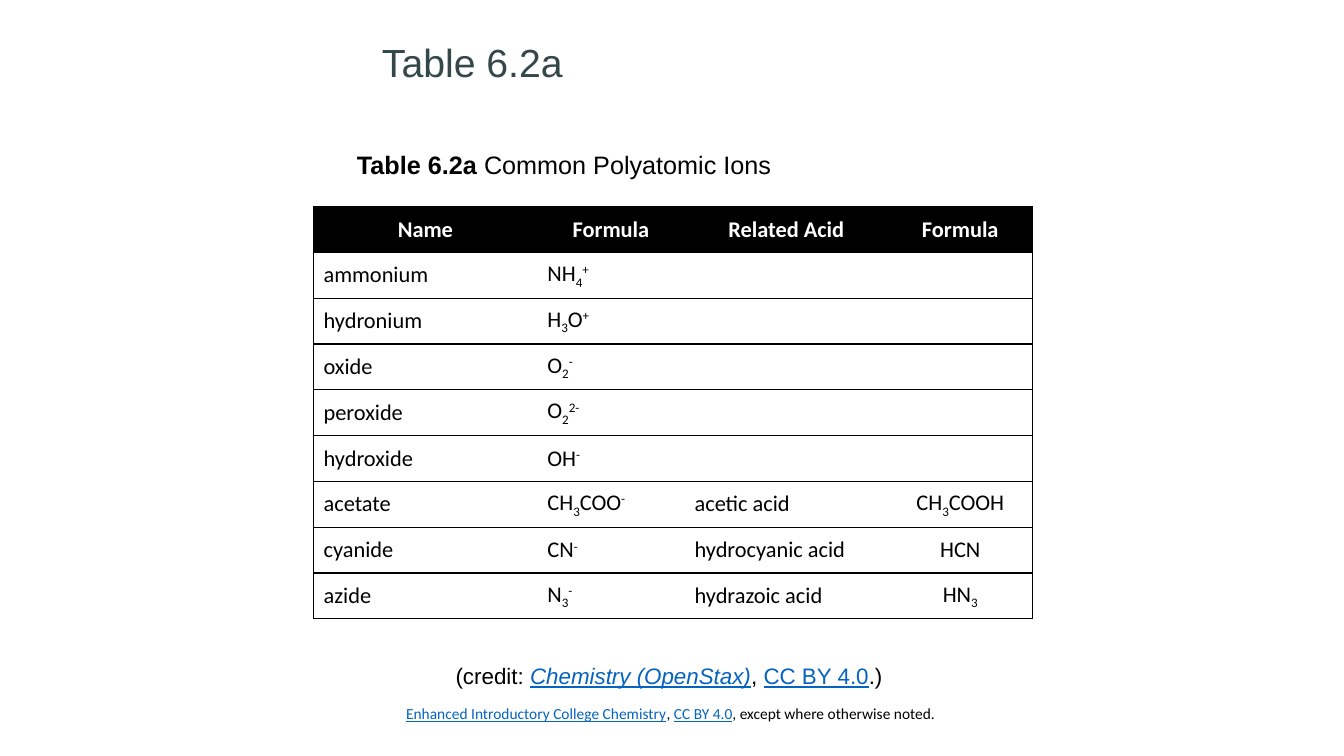
import lxml.etree
import pptx
import pptx.dml.color
import pptx.enum.text
import pptx.oxml.ns
import pptx.util

EMU_PER_PX = 9144
COLORS = {"black": "000000", "white": "FFFFFF", "link": "0563C1", "title": "354849"}
LEFT = pptx.enum.text.PP_ALIGN.LEFT
CENTER = pptx.enum.text.PP_ALIGN.CENTER
BASELINES = {"_": "-25000", "^": "30000"}
COLUMN_WIDTHS = [222, 146, 202, 143]
IONS = [
    ("Name", "Formula", "Related Acid", "Formula"),
    ("ammonium", "NH|_4|^+", "", ""),
    ("hydronium", "H|_3|O|^+", "", ""),
    ("oxide", "O|_2|^-", "", ""),
    ("peroxide", "O|_2|^2-", "", ""),
    ("hydroxide", "OH|^-", "", ""),
    ("acetate", "CH|_3|COO|^-", "acetic acid", "CH|_3|COOH"),
    ("cyanide", "CN|^-", "hydrocyanic acid", "HCN"),
    ("azide", "N|_3|^-", "hydrazoic acid", "HN|_3"),
]


def px(length):
    """Convert pixels to EMU."""
    return pptx.util.Emu(length * EMU_PER_PX)


def rgb(name):
    """Look up a named colour."""
    return pptx.dml.color.RGBColor.from_string(COLORS[name])


def add_run(paragraph, text, size=16, font="Calibri", color="black",
            bold=False, italic=False, underline=False, baseline=None):
    """Append one formatted run to a paragraph."""
    run = paragraph.add_run()
    run.text = text
    run.font.size = pptx.util.Pt(size)
    run.font.name = font
    run.font.color.rgb = rgb(color)
    run.font.bold = bold
    run.font.italic = italic
    run.font.underline = underline
    if baseline:
        run._r.get_or_add_rPr().set("baseline", baseline)


def add_link_text(paragraph, text, **style):
    """Append a run that looks like a link."""
    add_run(paragraph, text, color="link", underline=True, **style)


def add_formula(paragraph, formula, **style):
    """Append parts split by bars, marked _ for subscript and ^ for superscript."""
    for part in filter(None, formula.split("|")):
        add_run(paragraph, part.lstrip("_^"), baseline=BASELINES.get(part[0]), **style)


def add_text_box(slide, left, top, width, height, alignment=LEFT, wrap=True,
                 anchor=pptx.enum.text.MSO_ANCHOR.TOP):
    """Add a text box and return its paragraph."""
    frame = slide.shapes.add_textbox(px(left), px(top), px(width), px(height)).text_frame
    frame.word_wrap = wrap
    frame.vertical_anchor = anchor
    frame.paragraphs[0].alignment = alignment
    return frame.paragraphs[0]


def set_borders(cell, sides):
    """Draw thin black lines on the given sides and clear the others."""
    properties = cell._tc.get_or_add_tcPr()
    for index, side in enumerate("LRTB"):
        line = lxml.etree.Element(pptx.oxml.ns.qn("a:ln" + side), w="12700")
        if side in sides:
            fill = lxml.etree.SubElement(line, pptx.oxml.ns.qn("a:solidFill"))
            lxml.etree.SubElement(fill, pptx.oxml.ns.qn("a:srgbClr"), val=COLORS["black"])
        else:
            lxml.etree.SubElement(line, pptx.oxml.ns.qn("a:noFill"))
        properties.insert(index, line)


def fill_cell(cell, text, is_header, is_first, is_last):
    """Write and style one table cell."""
    cell.fill.solid()
    cell.fill.fore_color.rgb = rgb("black" if is_header else "white")
    cell.vertical_anchor = pptx.enum.text.MSO_ANCHOR.MIDDLE
    paragraph = cell.text_frame.paragraphs[0]
    if is_header or is_last:
        cell.margin_left = cell.margin_right = cell.margin_top = cell.margin_bottom = 0
        paragraph.alignment = CENTER
    add_formula(paragraph, text, color="white" if is_header else "black", bold=is_header)
    set_borders(cell, "TB" + "L" * is_first + "R" * is_last)


def add_ion_table(slide, left, top, height):
    """Add the table of polyatomic ions."""
    frame = slide.shapes.add_table(len(IONS), len(COLUMN_WIDTHS), px(left), px(top),
                                   px(sum(COLUMN_WIDTHS)), px(height))
    table = frame.table
    table.horz_banding = False
    for column, width in zip(table.columns, COLUMN_WIDTHS):
        column.width = px(width)
    last = len(COLUMN_WIDTHS) - 1
    for row_index, row in enumerate(IONS):
        for column_index, text in enumerate(row):
            fill_cell(table.cell(row_index, column_index), text,
                      row_index == 0, column_index == 0, column_index == last)


def main():
    """Build the slide and save it."""
    presentation = pptx.Presentation()
    presentation.slide_width = px(1333)
    presentation.slide_height = px(750)
    slide = presentation.slides.add_slide(presentation.slide_layouts[6])

    footer = add_text_box(slide, 393, 694, 707, 40)
    add_link_text(footer, "Enhanced Introductory College Chemistry", size=11)
    add_run(footer, ", ", size=11)
    add_link_text(footer, "CC BY 4.0", size=11)
    add_run(footer, ", except where otherwise noted.", size=11)

    title = add_text_box(slide, 369, 20, 430, 70, anchor=pptx.enum.text.MSO_ANCHOR.BOTTOM)
    title.line_spacing = 0.9
    add_run(title, "Table 6.2a", size=28, font="Arial", color="title")

    caption = add_text_box(slide, 296, 143, 527, 71, alignment=CENTER)
    add_run(caption, "Table 6.2a ", size=18, font="Arial", bold=True)
    add_run(caption, "Common Polyatomic Ions", size=18, font="Arial")

    add_ion_table(slide, 311, 205, 409)

    credit = add_text_box(slide, 442, 652, 449, 37, wrap=False)
    add_run(credit, "(credit: ", font="Arial")
    add_link_text(credit, "Chemistry (OpenStax)", font="Arial", italic=True)
    add_run(credit, ", ", font="Arial")
    add_link_text(credit, "CC BY 4.0", font="Arial")
    add_run(credit, ".)", font="Arial")

    presentation.save("out.pptx")


if __name__ == "__main__":
    main()
